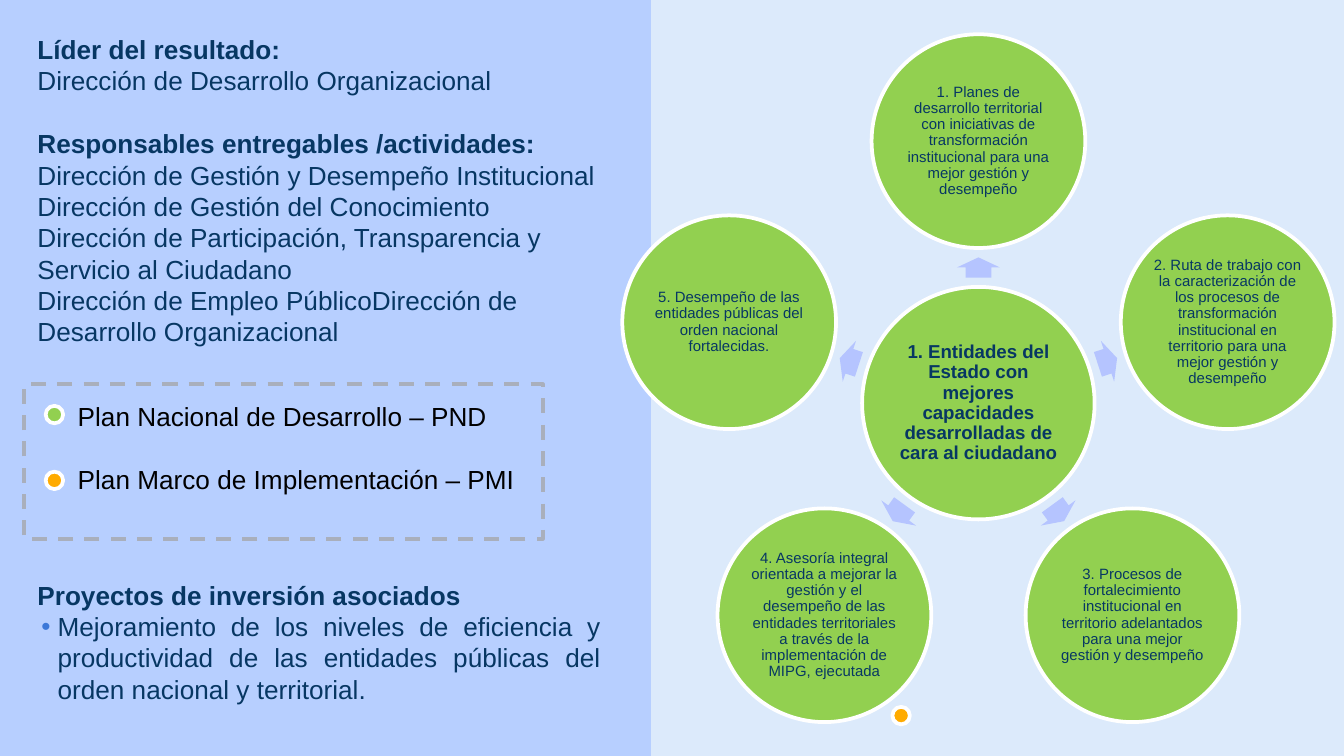
"""Build the slide on result leadership, with its circle of deliverables."""
from dataclasses import dataclass
from math import cos, radians, sin

from lxml import etree
from pptx import Presentation
from pptx.dml.color import RGBColor
from pptx.enum.dml import MSO_LINE
from pptx.enum.shapes import MSO_SHAPE
from pptx.enum.text import MSO_ANCHOR, PP_ALIGN
from pptx.oxml.ns import qn
from pptx.util import Inches, Pt

OVAL, RECTANGLE, ARROW = MSO_SHAPE.OVAL, MSO_SHAPE.RECTANGLE, MSO_SHAPE.RIGHT_ARROW
CENTER, LEFT, JUSTIFY = PP_ALIGN.CENTER, PP_ALIGN.LEFT, PP_ALIGN.JUSTIFY
TOP, MIDDLE = MSO_ANCHOR.TOP, MSO_ANCHOR.MIDDLE
DASH = MSO_LINE.DASH

COLUMNS, ROWS = 100, 56.25
CELL = Inches(0.1)
LINE_GAP = 16.8
COLORS = {
    "background": "DCEAFB", "panel": "B7CFFF", "green": "92D050", "white": "FFFFFF",
    "arrow": "B5C4FF", "navy": "073763", "black": "000000", "orange": "FFAB00",
    "dash": "A9AFBC", "bullet": "3C78D8",
}


@dataclass(frozen=True)
class Area:
    column: float
    row: float
    columns: float
    rows: float

    def lengths(self) -> list[int]:
        return [round(n * CELL) for n in (self.column, self.row, self.columns, self.rows)]


@dataclass(frozen=True)
class Span:
    text: str
    bold: bool = False


@dataclass(frozen=True)
class Para:
    spans: tuple[Span, ...]
    before: float = 0
    align: PP_ALIGN = LEFT
    spacing: float = 1.0
    bullet: str = ""


@dataclass(frozen=True)
class TextBlock:
    area: Area
    color: str
    paras: tuple[Para, ...]


@dataclass(frozen=True)
class Dot:
    column: float
    row: float
    color: str


HUB_COLUMN, HUB_ROW = 72.8, 30
ORBIT, ARROW_ORBIT = 19.5, 10.1
HUB_SIZE, CIRCLE_SIZE, DOT_SIZE = 17.3, 15.9, 1.3
HUB_TEXT = "1. Entidades del Estado con mejores capacidades desarrolladas de cara al ciudadano"
DELIVERABLES = (
    "1. Planes de desarrollo territorial con iniciativas de transformación institucional "
    "para una mejor gestión y desempeño",
    "2. Ruta de trabajo con la caracterización de los procesos de transformación "
    "institucional en territorio para una mejor gestión y desempeño",
    "3. Procesos de fortalecimiento institucional en territorio adelantados para una "
    "mejor gestión y desempeño",
    "4. Asesoría integral orientada a mejorar la gestión y el desempeño de las entidades "
    "territoriales a través de la implementación de MIPG, ejecutada",
    "5. Desempeño de las entidades públicas del orden nacional fortalecidas.",
)
LEADERSHIP = TextBlock(Area(1.8, 2, 45.5, 24.6), "navy", (
    Para((Span("Líder del resultado:", True),)),
    Para((Span("Dirección de Desarrollo Organizacional"),)),
    Para((Span("Responsables entregables /actividades: \n", True),
          Span("Dirección de Gestión y Desempeño Institucional")), before=LINE_GAP),
    Para((Span("Dirección de Gestión del Conocimiento"),)),
    Para((Span("Dirección de Participación, Transparencia y \nServicio al Ciudadano"),)),
    Para((Span("Dirección de Empleo PúblicoDirección de Desarrollo Organizacional"),)),
))
PROJECTS = TextBlock(Area(1.8, 42.6, 43.9, 10.4), "navy", (
    Para((Span("Proyectos de inversión asociados", True),)),
    Para((Span("Mejoramiento de los niveles de eficiencia y productividad de las entidades "
               "públicas del orden nacional y territorial."),), align=JUSTIFY, bullet="•"),
))
PLANS = TextBlock(Area(4.8, 29.3, 36.2, 12.8), "black", (
    Para((Span("Plan Nacional de Desarrollo – PND"),)),
    Para((Span("Plan Marco de Implementación – PMI"),), before=LINE_GAP),
))
PLAN_FRAME = Area(1.8, 28.6, 38.6, 11.5)
PLAN_DOTS = (Dot(4.05, 30.85, "green"), Dot(4.05, 35.75, "orange"))
DELIVERABLE_DOT = Dot(67.05, 53.25, "orange")


def rgb(name: str) -> RGBColor:
    return RGBColor.from_string(COLORS[name])


def centered(column: float, row: float, columns: float, rows: float) -> Area:
    return Area(column - columns / 2, row - rows / 2, columns, rows)


def on_orbit(angle: float, radius: float) -> tuple[float, float]:
    turn = radians(angle)
    return HUB_COLUMN + radius * sin(turn), HUB_ROW - radius * cos(turn)


def set_all(target, values: dict) -> None:
    for name, value in values.items():
        setattr(target, name, value)


def draw_shape(page, kind: MSO_SHAPE, area: Area, fill: str = "", line: str = ""):
    shape = page.shapes.add_shape(kind, *area.lengths())
    shape.shadow.inherit = False
    if fill:
        shape.fill.solid()
        shape.fill.fore_color.rgb = rgb(fill)
    else:
        shape.fill.background()
    if line:
        shape.line.color.rgb = rgb(line)
        shape.line.width = Pt(2)
    else:
        shape.line.fill.background()
    return shape


def add_bullet(paragraph, character: str) -> None:
    properties = paragraph._p.get_or_add_pPr()
    properties.set("marL", str(Inches(0.15)))
    properties.set("indent", str(Inches(-0.12)))
    color = etree.SubElement(properties, qn("a:buClr"))
    etree.SubElement(color, qn("a:srgbClr"), val=COLORS["bullet"])
    etree.SubElement(properties, qn("a:buFont"), typeface="Arial")
    etree.SubElement(properties, qn("a:buChar"), char=character)


def write(frame, paras: tuple[Para, ...], size: float, color: str) -> None:
    for index, para in enumerate(paras):
        paragraph = frame.add_paragraph() if index else frame.paragraphs[0]
        set_all(paragraph, {"alignment": para.align, "line_spacing": para.spacing,
                            "space_before": Pt(para.before)})
        if para.bullet:
            add_bullet(paragraph, para.bullet)
        for span in para.spans:
            for number, text in enumerate(span.text.split("\n")):
                if number:
                    paragraph.add_line_break()
                if text:
                    run = paragraph.add_run()
                    run.text = text
                    set_all(run.font, {"name": "Arial", "size": Pt(size), "bold": span.bold})
                    run.font.color.rgb = rgb(color)


def draw_text(page, block: TextBlock) -> None:
    frame = page.shapes.add_textbox(*block.area.lengths()).text_frame
    set_all(frame, {"word_wrap": True, "vertical_anchor": TOP})
    write(frame, block.paras, 14, block.color)


def draw_circle(page, area: Area, text: str, size: float, bold: bool = False) -> None:
    frame = draw_shape(page, OVAL, area, "green", "white").text_frame
    margins = ("margin_left", "margin_right", "margin_top", "margin_bottom")
    set_all(frame, {"word_wrap": True, "vertical_anchor": MIDDLE,
                    **dict.fromkeys(margins, Inches(0.01))})
    write(frame, (Para((Span(text, bold),), align=CENTER, spacing=0.9),), size, "navy")


def draw_dot(page, dot: Dot) -> None:
    draw_shape(page, OVAL, centered(dot.column, dot.row, DOT_SIZE, DOT_SIZE), dot.color, "white")


def draw_wheel(page) -> None:
    draw_circle(page, centered(HUB_COLUMN, HUB_ROW, HUB_SIZE, HUB_SIZE), HUB_TEXT, 10, True)
    for index, text in enumerate(DELIVERABLES):
        angle = index * 360 / len(DELIVERABLES)
        arrow = draw_shape(page, ARROW, centered(*on_orbit(angle, ARROW_ORBIT), 1.5, 3.2), "arrow")
        arrow.rotation = (angle + 270) % 360
        arrow.adjustments[0], arrow.adjustments[1] = 0.6, 0.5
        draw_circle(page, centered(*on_orbit(angle, ORBIT), CIRCLE_SIZE, CIRCLE_SIZE), text, 8)


def main() -> None:
    deck = Presentation()
    set_all(deck, {"slide_width": COLUMNS * CELL, "slide_height": round(ROWS * CELL)})
    page = deck.slides.add_slide(deck.slide_layouts[6])
    page.background.fill.solid()
    page.background.fill.fore_color.rgb = rgb("background")
    draw_shape(page, RECTANGLE, Area(0, 0, 48.3, ROWS), "panel", "panel")
    draw_wheel(page)
    draw_text(page, LEADERSHIP)
    draw_text(page, PROJECTS)
    draw_shape(page, RECTANGLE, PLAN_FRAME, line="dash").line.dash_style = DASH
    draw_text(page, PLANS)
    for dot in (*PLAN_DOTS, DELIVERABLE_DOT):
        draw_dot(page, dot)
    deck.save("out.pptx")


if __name__ == "__main__":
    main()
